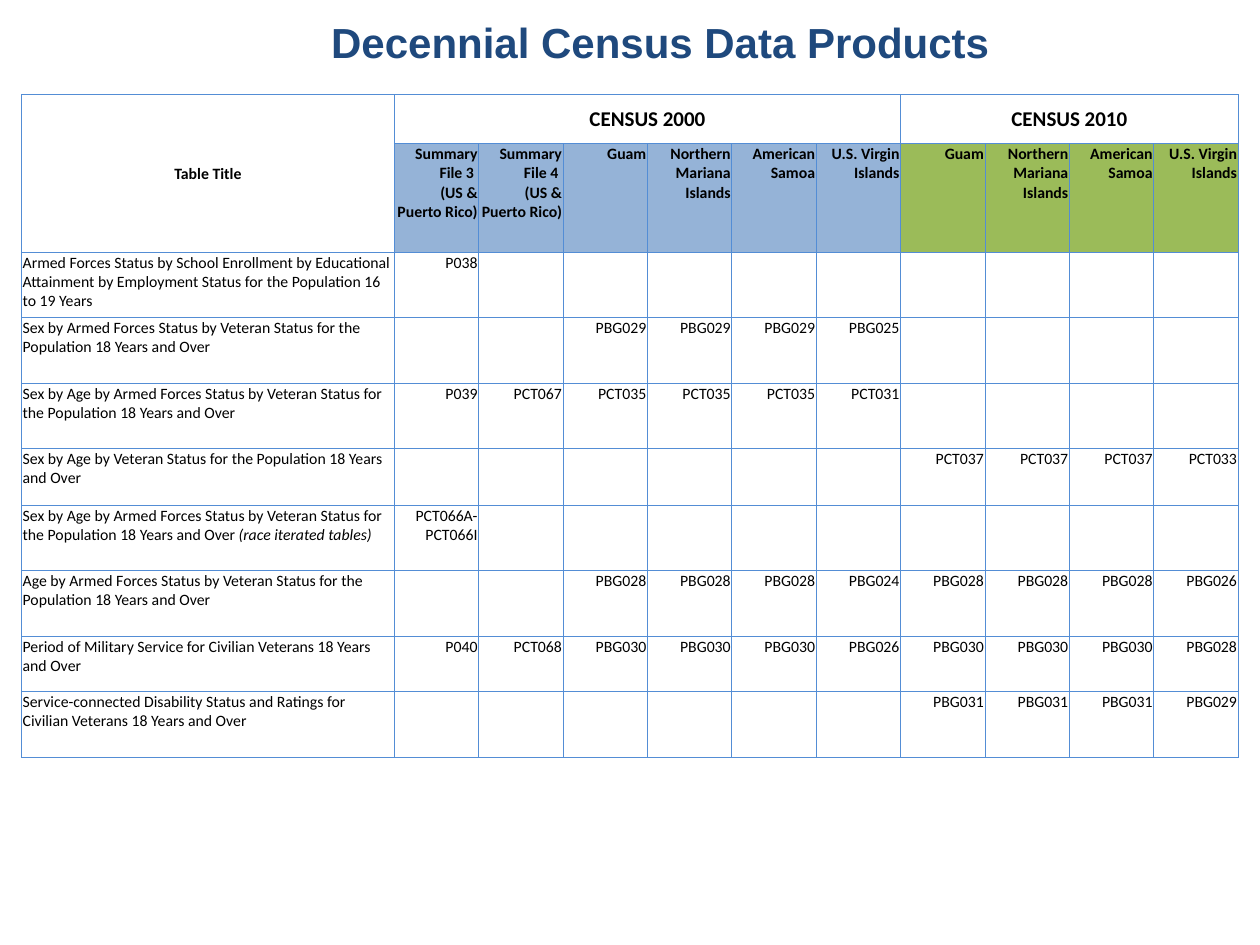
from lxml.etree import SubElement
from pptx import Presentation
from pptx.dml.color import RGBColor
from pptx.enum.text import MSO_ANCHOR, MSO_AUTO_SIZE, PP_ALIGN
from pptx.oxml.ns import qn
from pptx.util import Inches, Pt

BLUE, GREEN, BORDER, NAVY, BLACK = "95B3D7", "9BBB59", "538DD5", "1F497D", "000000"
COL_WIDTHS = [2.96] + [0.67] * 10
ROW_HEIGHTS = [0.39, 0.86, 0.52, 0.52, 0.52, 0.45, 0.52, 0.52, 0.44, 0.52]
ISLANDS = ["Guam", "Northern Mariana Islands", "American Samoa", "U.S. Virgin Islands"]
FILES = [f"Summary File {n} \n(US & Puerto Rico)" for n in (3, 4)]
NONE = ("", "")

# Each row: title, Summary Files 3 and 4, then (Pacific islands, Virgin Islands) for 2000 and 2010
ROWS = [
    ("Armed Forces Status by School Enrollment by Educational Attainment by "
     "Employment Status for the Population 16 to 19 Years", ("P038", ""), NONE, NONE),
    ("Sex by Armed Forces Status by Veteran Status for the Population 18 Years and Over",
     NONE, ("PBG029", "PBG025"), NONE),
    ("Sex by Age by Armed Forces Status by Veteran Status for the Population 18 Years and Over",
     ("P039", "PCT067"), ("PCT035", "PCT031"), NONE),
    ("Sex by Age by Veteran Status for the Population 18 Years and Over",
     NONE, NONE, ("PCT037", "PCT033")),
    ("Sex by Age by Armed Forces Status by Veteran Status for the Population 18 Years and Over ",
     ("PCT066A-PCT066I", ""), NONE, NONE),
    ("Age by Armed Forces Status by Veteran Status for the Population 18 Years and Over",
     NONE, ("PBG028", "PBG024"), ("PBG028", "PBG026")),
    ("Period of Military Service for Civilian Veterans 18 Years and Over",
     ("P040", "PCT068"), ("PBG030", "PBG026"), ("PBG030", "PBG028")),
    ("Service-connected Disability Status and Ratings for Civilian Veterans 18 Years and Over",
     NONE, NONE, ("PBG031", "PBG029")),
]
ITALIC_ROW, ITALIC_NOTE = 4, "(race iterated tables)"


def rgb(color):
    return RGBColor.from_string(color)


def set_font(p, name, size, color, bold):
    p.font.name, p.font.size, p.font.bold = name, Pt(size), bold
    p.font.color.rgb = rgb(color)


def add_borders(cell):
    tc_pr = cell._tc.get_or_add_tcPr()
    for i, side in enumerate(("lnL", "lnR", "lnT", "lnB")):
        ln = tc_pr.makeelement(qn(f"a:{side}"), {"w": str(Pt(0.5))})
        fill = SubElement(ln, qn("a:solidFill"))
        SubElement(fill, qn("a:srgbClr"), val=BORDER)
        tc_pr.insert(i, ln)


def fill_cell(cell, text="", align=PP_ALIGN.RIGHT, size=9, bold=False,
              fill=None, anchor=MSO_ANCHOR.TOP):
    cell.margin_left = cell.margin_right = cell.margin_top = Inches(0.01)
    cell.margin_bottom = 0
    cell.vertical_anchor = anchor
    if fill:
        cell.fill.solid()
        cell.fill.fore_color.rgb = rgb(fill)
    else:
        cell.fill.background()
    add_borders(cell)
    p = cell.text_frame.paragraphs[0]
    p.text = text
    p.alignment = align
    set_font(p, "Calibri", size, BLACK, bold)


def add_title(s, text):
    sp = s.shapes.title
    sp.left, sp.top, sp.width, sp.height = map(Inches, (2.5, 0.08, 5.48, 0.5))
    tf = sp.text_frame
    tf.word_wrap = False
    tf.auto_size = MSO_AUTO_SIZE.SHAPE_TO_FIT_TEXT
    tf.vertical_anchor = MSO_ANCHOR.TOP
    p = tf.paragraphs[0]
    p.text = text
    p.alignment = PP_ALIGN.CENTER
    set_font(p, "Arial", 24, NAVY, True)


def add_grid(s):
    box = map(Inches, (0.17, 0.75, sum(COL_WIDTHS), sum(ROW_HEIGHTS)))
    table = s.shapes.add_table(len(ROW_HEIGHTS), len(COL_WIDTHS), *box).table
    table.first_row = table.horz_banding = False
    for col, width in zip(table.columns, COL_WIDTHS):
        col.width = Inches(width)
    for row, height in zip(table.rows, ROW_HEIGHTS):
        row.height = Inches(height)
    return table


def add_headers(table):
    for c in range(len(COL_WIDTHS)):
        text, size = {0: ("Table Title", 9), 1: ("CENSUS 2000", 12),
                      7: ("CENSUS 2010", 12)}.get(c, ("", 12))
        fill_cell(table.cell(0, c), text, PP_ALIGN.CENTER, size, True,
                  anchor=MSO_ANCHOR.MIDDLE)
    fill_cell(table.cell(1, 0))
    for c, text in enumerate(FILES + ISLANDS * 2, 1):
        fill_cell(table.cell(1, c), text, bold=True, fill=BLUE if c < 7 else GREEN)
    for first, last in (((0, 0), (1, 0)), ((0, 1), (0, 6)), ((0, 7), (0, 10))):
        table.cell(*first).merge(table.cell(*last))


def add_rows(table):
    for r, (title, files, *censuses) in enumerate(ROWS, 2):
        fill_cell(table.cell(r, 0), title, PP_ALIGN.LEFT)
        codes = list(files)
        for pacific, virgin in censuses:
            codes += [pacific] * 3 + [virgin]
        for c, code in enumerate(codes, 1):
            fill_cell(table.cell(r, c), code)
    note = table.cell(ITALIC_ROW + 2, 0).text_frame.paragraphs[0].add_run()
    note.text = ITALIC_NOTE
    note.font.italic = True


def main():
    prs = Presentation()
    prs.slide_width, prs.slide_height = Inches(10), Inches(7.5)
    s = prs.slides.add_slide(prs.slide_layouts[5])
    add_title(s, "Decennial Census Data Products")
    table = add_grid(s)
    add_headers(table)
    add_rows(table)
    prs.save("out.pptx")


if __name__ == "__main__":
    main()
